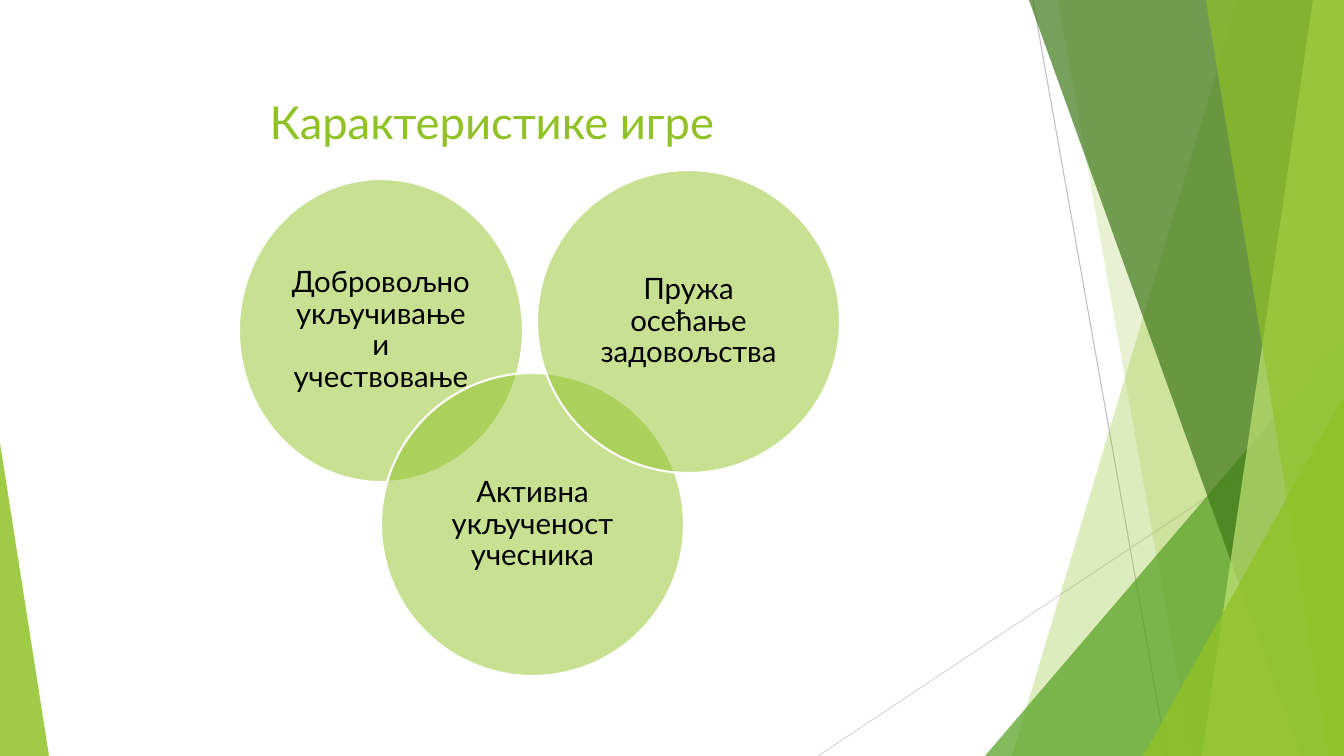
from lxml import etree
from pptx import Presentation, util as u
from pptx.dml.color import RGBColor
from pptx.enum import shapes, text
from pptx.oxml.ns import qn

PX = 914400 / 100.8  # EMU in one px
WIDE, HIGH = 1344, 756
FONT = "Lato"
HUES = {"lime": "90C226", "leaf": "54A021", "pine": "3F7819", "pale": "C0E474",
        "mid": "BFBFBF", "light": "D9D9D9", "white": "FFFFFF", "black": "000000"}

# Content
TITLE = "Карактеристике игре"
CIRCLES = [  # words, left, top, width, height
    ("Добровољно укључивање и учествовање", 239, 179, 284, 303),
    ("Активна укљученост учесника", 381, 373, 303, 303),
    ("Пружа осећање задовољства", 537, 170, 303, 303),
]

# Decoration
LINES = [((1033, 0), (1167, HIGH), "mid"), ((WIDE, 406), (818, HIGH), "light")]
BANDS = [  # top left x, bottom left x, colour, opacity %; None marks the wedge
    (1238, 1012, "lime", 30),
    (1058, 1192, "lime", 20),
    None,
    (1029, 1301, "pine", 70),
    (1313, 1202, "pale", 70),
    (1206, 1329, "lime", 65),
]
WEDGE = (985, 336, 359, 420, 1, "leaf", 72)  # box, apex, colour, opacity %
CORNERS = [(1143, 396, 201, 360, 1, "lime", 80), (0, 443, 49, 313, 0, "lime", 85)]


def emu(*vals):
    return [u.Emu(round(v * PX)) for v in vals]


def hue(name):
    return RGBColor.from_string(HUES[name])


def assign(item, vals):
    for key, val in vals.items():
        setattr(item, key, val)


def paint(shape, name, alpha):
    shape.shadow.inherit = False
    shape.fill.solid()
    shape.fill.fore_color.rgb = hue(name)
    tint = shape.fill._xPr.find(qn("a:solidFill"))[0]
    etree.SubElement(tint, qn("a:alpha"), val=str(alpha * 1000))
    shape.line.fill.background()


def write(frame, words, size, name, form, gap=None):
    assign(frame, {"word_wrap": True, **form})
    para = frame.paragraphs[0]
    assign(para, {"alignment": text.PP_ALIGN.CENTER, "line_spacing": gap})
    run = para.add_run()
    run.text = words
    assign(run.font, {"name": FONT, "size": u.Pt(size)})
    run.font.color.rgb = hue(name)


deck = Presentation()
deck.slide_width, deck.slide_height = emu(WIDE, HIGH)
slide = deck.slides.add_slide(deck.slide_layouts[5])
parts = slide.shapes


def draw_band(top, foot, name, alpha):
    pen = parts.build_freeform(top, 0, scale=PX)
    pen.add_line_segments([(WIDE, 0), (WIDE, HIGH), (foot, HIGH)], close=True)
    paint(pen.convert_to_shape(), name, alpha)


def draw_wedge(x, y, w, h, apex, name, alpha):
    wedge = parts.add_shape(shapes.MSO_SHAPE.ISOSCELES_TRIANGLE, *emu(x, y, w, h))
    wedge.adjustments[0] = apex
    paint(wedge, name, alpha)


# Thin lines
for start, end, name in LINES:
    line = parts.add_connector(shapes.MSO_CONNECTOR.STRAIGHT, *emu(*start, *end))
    line.line.width = u.Pt(0.75)
    line.line.color.rgb = hue(name)
    etree.SubElement(line._element.spPr, qn("a:effectLst"))

# Green bands and corners
for band in BANDS:
    if band:
        draw_band(*band)
    else:
        draw_wedge(*WEDGE)
for corner in CORNERS:
    draw_wedge(*corner)

# Title
title = parts.title
assign(title, dict(zip(("left", "top", "width", "height"), emu(18, 33, 948, 145))))
write(title.text_frame, TITLE, 32.4, "lime",
      {"vertical_anchor": text.MSO_ANCHOR.TOP, "margin_top": emu(61)[0],
       "auto_size": text.MSO_AUTO_SIZE.NONE})

# Overlapping circles
sides = ("margin_left", "margin_top", "margin_right", "margin_bottom")
form = {"vertical_anchor": text.MSO_ANCHOR.MIDDLE, **dict(zip(sides, emu(9, 9, 9, 9)))}
for words, *box in CIRCLES:
    disc = parts.add_shape(shapes.MSO_SHAPE.OVAL, *emu(*box))
    paint(disc, "lime", 50)
    disc.line.color.rgb = hue("white")
    disc.line.width = u.Pt(1.5)
    write(disc.text_frame, words, 21, "black", form, 0.9)

deck.save("out.pptx")
